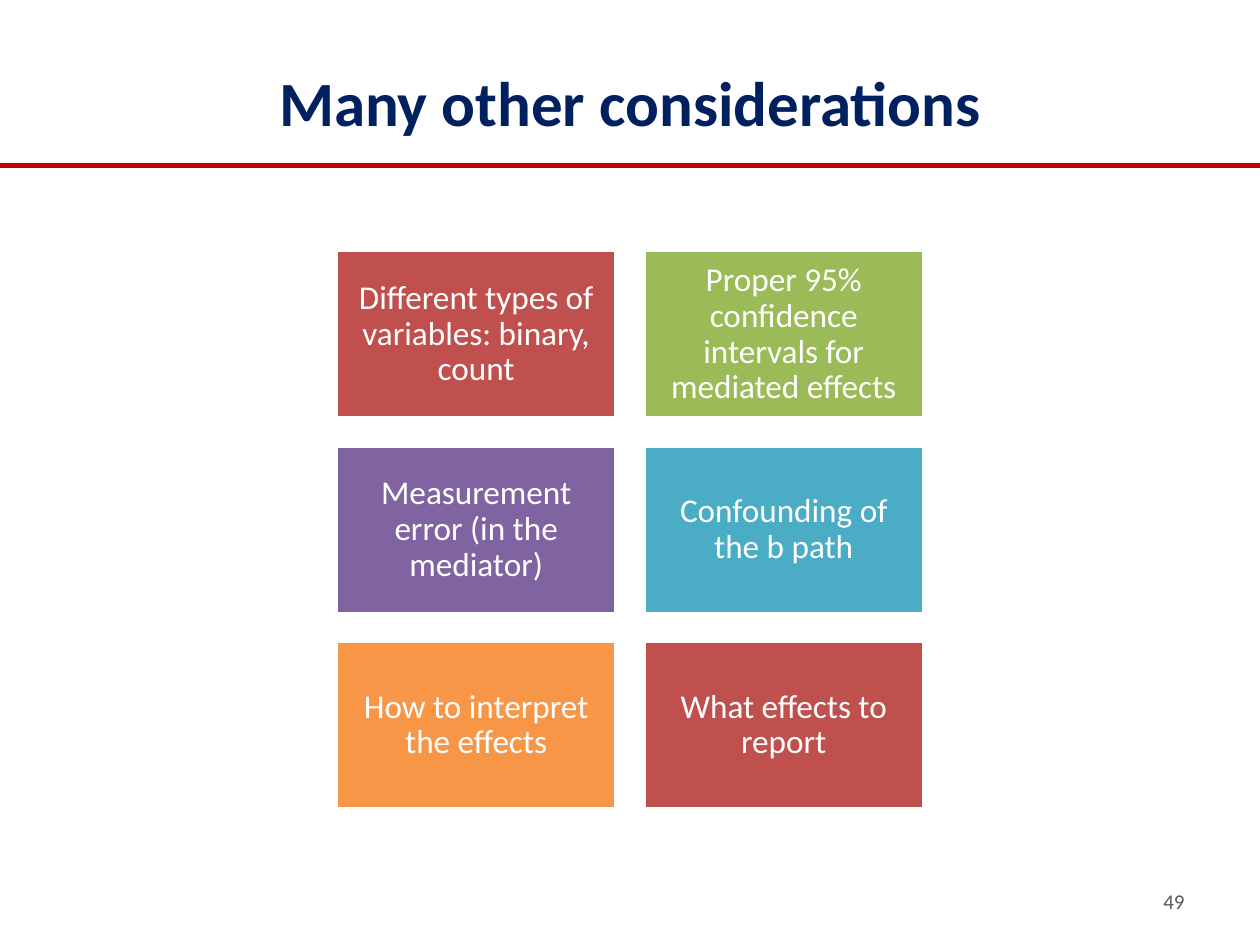
from dataclasses import dataclass

from lxml import etree
from pptx import Presentation
from pptx.dml.color import RGBColor
from pptx.enum.shapes import MSO_CONNECTOR, MSO_SHAPE
from pptx.enum.text import MSO_ANCHOR, PP_ALIGN
from pptx.oxml.ns import qn
from pptx.slide import Slide
from pptx.text.text import TextFrame
from pptx.util import Cm, Pt

RECT = MSO_SHAPE.RECTANGLE
LINE = MSO_CONNECTOR.STRAIGHT
MIDDLE = MSO_ANCHOR.MIDDLE
CENTER = PP_ALIGN.CENTER
RIGHT = PP_ALIGN.RIGHT


@dataclass(frozen=True)
class Theme:
    font: str = "Calibri"
    navy: str = "002060"
    rule: str = "C00000"
    white: str = "FFFFFF"
    grey: str = "595959"
    red: str = "C0504D"
    green: str = "9BBB59"
    purple: str = "8064A2"
    blue: str = "4BACC6"
    orange: str = "F79646"
    title: int = 36
    body: int = 19
    small: int = 12


@dataclass(frozen=True)
class Box:
    left: float
    top: float
    width: float
    height: float

    def place(self) -> tuple[Cm, Cm, Cm, Cm]:
        return Cm(self.left), Cm(self.top), Cm(self.width), Cm(self.height)


@dataclass(frozen=True)
class Tile:
    text: str
    fill: str


THEME = Theme()
WIDTH, HEIGHT = 25.4, 19.05

# Tile grid, in cm
COLS = 2
FIRST = Box(6.78, 5.05, 5.64, 3.38)
GAP = 0.56
PAD = 0.2

TILES = [
    Tile("Different types of variables: binary, count", THEME.red),
    Tile("Proper 95% confidence intervals for mediated effects", THEME.green),
    Tile("Measurement error (in the mediator)", THEME.purple),
    Tile("Confounding of the b path", THEME.blue),
    Tile("How to interpret the effects", THEME.orange),
    Tile("What effects to report", THEME.red),
]


def write(frame: TextFrame, text: str, size: int, color: str,
          align: PP_ALIGN, bold: bool = False) -> None:
    frame.text = text
    frame.word_wrap = True
    frame.vertical_anchor = MIDDLE
    para = frame.paragraphs[0]
    para.alignment = align
    font = para.runs[0].font
    font.name = THEME.font
    font.size = Pt(size)
    font.bold = bold
    font.color.rgb = RGBColor.from_string(color)


def add_label(slide: Slide, box: Box, text: str, size: int, color: str,
              align: PP_ALIGN, bold: bool = False) -> None:
    label = slide.shapes.add_textbox(*box.place())
    write(label.text_frame, text, size, color, align, bold)


def add_rule(slide: Slide, top: float) -> None:
    rule = slide.shapes.add_connector(LINE, 0, Cm(top), Cm(WIDTH), Cm(top))
    rule.line.color.rgb = RGBColor.from_string(THEME.rule)
    rule.line.width = Pt(3)
    etree.SubElement(rule._element.spPr, qn("a:effectLst"))


def add_tile(slide: Slide, box: Box, tile: Tile) -> None:
    shape = slide.shapes.add_shape(RECT, *box.place())
    shape.shadow.inherit = False
    shape.fill.solid()
    shape.fill.fore_color.rgb = RGBColor.from_string(tile.fill)
    shape.line.color.rgb = RGBColor.from_string(THEME.white)
    shape.line.width = Pt(2)
    frame = shape.text_frame
    frame.margin_left = frame.margin_right = Cm(PAD)
    frame.margin_top = frame.margin_bottom = Cm(PAD)
    write(frame, tile.text, THEME.body, THEME.white, CENTER)
    frame.paragraphs[0].line_spacing = 0.9


def main() -> None:
    deck = Presentation()
    deck.slide_width, deck.slide_height = Cm(WIDTH), Cm(HEIGHT)
    slide = deck.slides.add_slide(deck.slide_layouts[6])

    # Heading
    add_rule(slide, 3.33)
    add_label(slide, Box(1.27, 0.76, 22.86, 2.57), "Many other considerations",
              THEME.title, THEME.navy, CENTER, bold=True)

    # Tiles, row by row
    for i, tile in enumerate(TILES):
        row, col = divmod(i, COLS)
        left = FIRST.left + col * (FIRST.width + GAP)
        top = FIRST.top + row * (FIRST.height + GAP)
        add_tile(slide, Box(left, top, FIRST.width, FIRST.height), tile)

    # Page number
    add_label(slide, Box(18.2, 17.66, 5.93, 1.01), "49",
              THEME.small, THEME.grey, RIGHT)

    deck.save("out.pptx")


if __name__ == "__main__":
    main()
